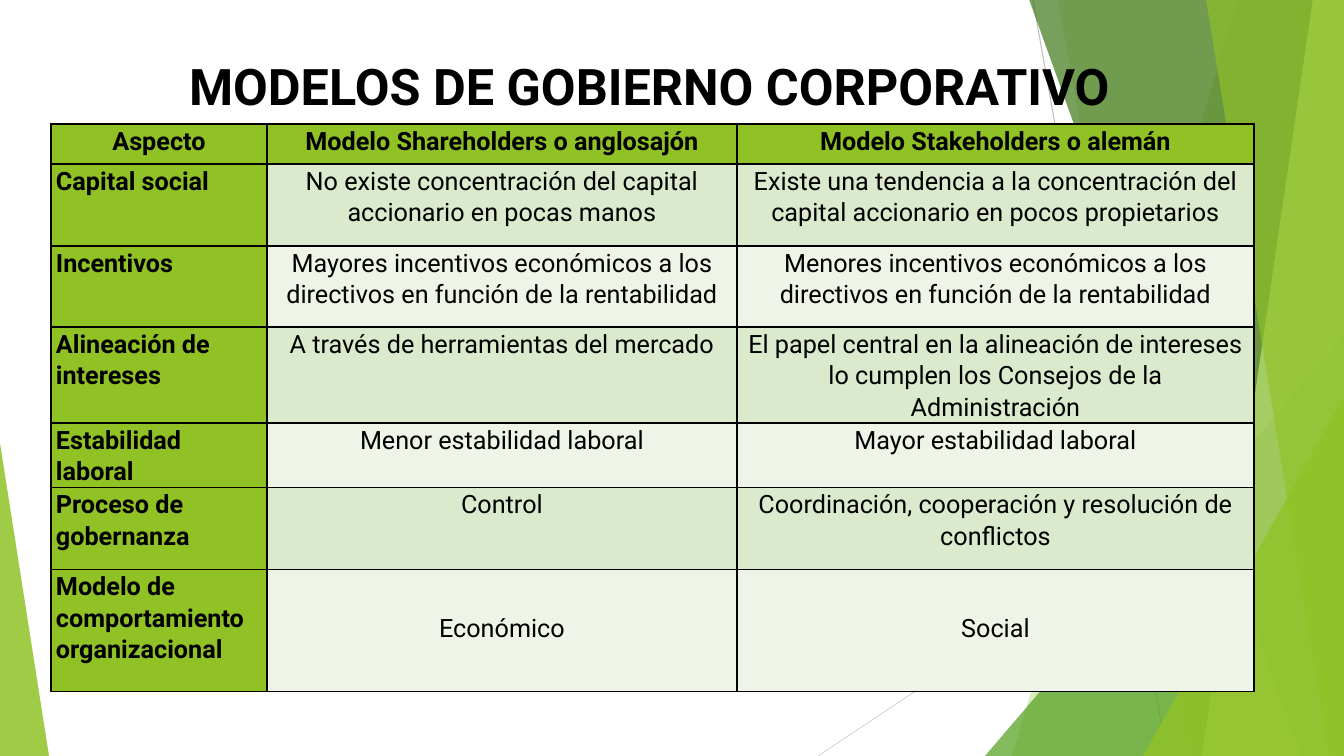
from dataclasses import dataclass

from lxml import etree
from pptx import Presentation
from pptx.dml.color import RGBColor
from pptx.enum.shapes import MSO_CONNECTOR, MSO_SHAPE
from pptx.enum.text import MSO_ANCHOR, MSO_AUTO_SIZE, PP_ALIGN
from pptx.oxml.ns import qn
from pptx.util import Pt

STRAIGHT, TRIANGLE = MSO_CONNECTOR.STRAIGHT, MSO_SHAPE.ISOSCELES_TRIANGLE
TOP, NO_FIT = MSO_ANCHOR.TOP, MSO_AUTO_SIZE.NONE
LEFT, CENTER = PP_ALIGN.LEFT, PP_ALIGN.CENTER

TITLE = "MODELOS DE GOBIERNO CORPORATIVO"
ROWS = [
    ("Aspecto", "Modelo Shareholders o anglosajón", "Modelo Stakeholders o alemán"),
    ("Capital social",
     "No existe concentración del capital accionario en pocas manos",
     "Existe una tendencia a la concentración del capital accionario en pocos propietarios"),
    ("Incentivos",
     "Mayores incentivos económicos a los directivos en función de la rentabilidad",
     "Menores incentivos económicos a los directivos en función de la rentabilidad"),
    ("Alineación de intereses",
     "A través de herramientas del mercado",
     "El papel central en la alineación de intereses lo cumplen los Consejos de la Administración"),
    ("Estabilidad laboral", "Menor estabilidad laboral", "Mayor estabilidad laboral"),
    ("Proceso de gobernanza", "Control", "Coordinación, cooperación y resolución de conflictos"),
    ("Modelo de comportamiento organizacional", "Económico", "Social"),
]


@dataclass(frozen=True)
class Theme:
    font: str = "Roboto"
    title_size: int = 36
    table_size: int = 18
    text: str = "000000"
    green: str = "90C226"
    mid_green: str = "54A021"
    dark_green: str = "3F7819"
    lime: str = "C0E474"
    bands: tuple = ("EEF4E8", "DBE9CD")
    line_grey: str = "BFBFBF"
    pale_grey: str = "D9D9D9"


T = Theme()
W, H = 1344, 756
COL_WIDTHS = (216, 470, 517)
ROW_HEIGHTS = (40, 82, 81, 96, 64, 82, 122)
TABLE_LEFT, TABLE_TOP = 51, 124
LAST_ROW_INSET = 43

LINES = [
    (1033, 0, 1167, H, T.line_grey),
    (W, 406, 818, H, T.pale_grey),
]
BACK_PANELS = [(1238, 1012, T.green, 30), (1058, 1192, T.green, 20)]
FRONT_PANELS = [
    (1029, 1301, T.dark_green, 70),
    (1313, 1202, T.lime, 70),
    (1206, 1329, T.green, 65),
]
BACK_TRIANGLES = [(985, 336, 359, 420, 1, T.mid_green, 72)]
FRONT_TRIANGLES = [
    (1143, 396, 201, 360, 1, T.green, 80),
    (0, 443, 49, 313, 0, T.green, 85),
]


def px(n):
    return round(n * 12192000 / W)


def rgb(color):
    return RGBColor.from_string(color)


def paint(sp, color, opacity):
    sp.shadow.inherit = False
    sp.line.fill.background()
    sp.fill.solid()
    sp.fill.fore_color.rgb = rgb(color)
    clr = sp._element.spPr.find(qn("a:solidFill"))[0]
    etree.SubElement(clr, qn("a:alpha"), val=str(opacity * 1000))


def add_line(s, x1, y1, x2, y2, color):
    line = s.shapes.add_connector(STRAIGHT, px(x1), px(y1), px(x2), px(y2))
    line.line.color.rgb = rgb(color)
    line.line.width = Pt(0.75)
    etree.SubElement(line._element.spPr, qn("a:effectLst"))


def add_panel(s, top_x, bottom_x, color, opacity):
    fb = s.shapes.build_freeform(px(top_x), px(-1))
    fb.add_line_segments([(px(x), px(y)) for x, y in ((W, -1), (W, H), (bottom_x, H))])
    paint(fb.convert_to_shape(), color, opacity)


def add_triangle(s, x, y, w, h, apex, color, opacity):
    sp = s.shapes.add_shape(TRIANGLE, px(x), px(y), px(w), px(h))
    sp.adjustments[0] = apex
    paint(sp, color, opacity)


def set_font(p, size, bold):
    p.font.name = T.font
    p.font.size = Pt(size)
    p.font.bold = bold
    p.font.color.rgb = rgb(T.text)


def add_title(s):
    title = s.shapes.title
    s.shapes._spTree.append(title._element)
    title.left, title.top, title.width, title.height = map(px, (179, 50, 948, 145))
    tf = title.text_frame
    tf.text = TITLE
    tf.auto_size = NO_FIT
    tf.vertical_anchor = TOP
    p = tf.paragraphs[0]
    p.alignment = LEFT
    set_font(p, T.title_size, True)


def add_borders(cell):
    tc_pr = cell._tc.get_or_add_tcPr()
    for side in ("a:lnL", "a:lnR", "a:lnT", "a:lnB"):
        ln = etree.SubElement(tc_pr, qn(side), w=str(Pt(1)))
        fill = etree.SubElement(ln, qn("a:solidFill"))
        etree.SubElement(fill, qn("a:srgbClr"), val=T.text)


def fill_cell(cell, text, row, col):
    heading = row == 0 or col == 0
    add_borders(cell)
    cell.fill.solid()
    cell.fill.fore_color.rgb = rgb(T.green if heading else T.bands[row % 2])
    cell.margin_left = cell.margin_right = px(5)
    cell.margin_top = px(LAST_ROW_INSET if row == len(ROWS) - 1 and col else 1)
    cell.margin_bottom = 0
    cell.vertical_anchor = TOP
    cell.text = text
    p = cell.text_frame.paragraphs[0]
    p.alignment = LEFT if row and col == 0 else CENTER
    p.line_spacing = 1.07
    p.space_after = Pt(8)
    set_font(p, T.table_size, heading)


def add_models_table(s):
    frame = s.shapes.add_table(
        len(ROWS), len(COL_WIDTHS), px(TABLE_LEFT), px(TABLE_TOP),
        px(sum(COL_WIDTHS)), px(sum(ROW_HEIGHTS)))
    table = frame.table
    table.first_row = table.horz_banding = False
    for column, width in zip(table.columns, COL_WIDTHS):
        column.width = px(width)
    for i, (row, height) in enumerate(zip(ROWS, ROW_HEIGHTS)):
        table.rows[i].height = px(height)
        for j, text in enumerate(row):
            fill_cell(table.cell(i, j), text, i, j)


def main():
    prs = Presentation()
    prs.slide_width, prs.slide_height = px(W), px(H)
    s = prs.slides.add_slide(prs.slide_layouts[5])
    for add, items in (
        (add_line, LINES),
        (add_panel, BACK_PANELS),
        (add_triangle, BACK_TRIANGLES),
        (add_panel, FRONT_PANELS),
        (add_triangle, FRONT_TRIANGLES),
    ):
        for item in items:
            add(s, *item)
    add_title(s)
    add_models_table(s)
    prs.save("out.pptx")


if __name__ == "__main__":
    main()
